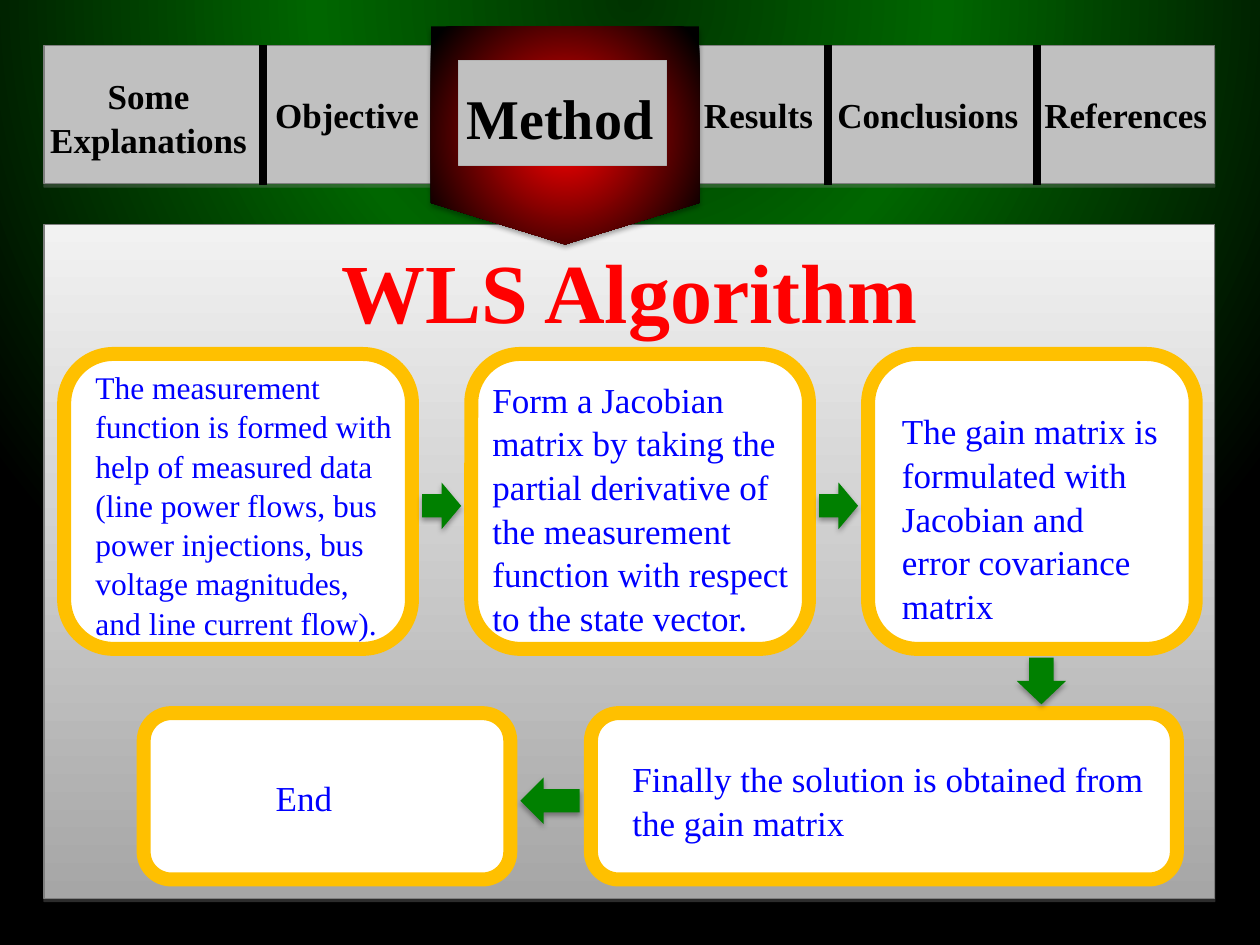
from lxml import etree
from pptx import Presentation
from pptx.dml.color import RGBColor
from pptx.enum.shapes import MSO_CONNECTOR, MSO_SHAPE
from pptx.enum.text import PP_ALIGN
from pptx.oxml import parse_xml
from pptx.oxml.ns import qn
from pptx.util import Inches, Pt

RECT, ROUND = MSO_SHAPE.RECTANGLE, MSO_SHAPE.ROUNDED_RECTANGLE
PENTAGON, ARROW = MSO_SHAPE.PENTAGON, MSO_SHAPE.RIGHT_ARROW
LEFT, CENTER = PP_ALIGN.LEFT, PP_ALIGN.CENTER
NS = 'xmlns:a="http://schemas.openxmlformats.org/drawingml/2006/main"'

THEME = {
    "font": "Times New Roman", "spacing": 1.04,
    "black": "000000", "white": "FFFFFF", "silver": "C0C0C0",
    "edge": "7F7F7F", "tab_edge": "B3B3B3", "amber": "FFC000",
    "blue": "0000FF", "red": "FF0000", "green": "008000",
    "background": [(0, "003300"), (40, "006600"), (100, "000000")],
    "panel": [(0, "F2F2F2"), (100, "A6A6A6")],
    "marker": [(0, "FF0000"), (94, "000000")],
    "title": 48, "tab": 32, "body": 20, "small": 18,
}

# Content: navigation labels with left, top, width, height
NAV = [
    (["Some", "Explanations"], (-0.04, 0.53, 2.44, 0.77)),
    (["Objective"], (1.69, 0.68, 2.13, 0.44)),
    (["Results"], (5.31, 0.68, 1.42, 0.44)),
    (["Conclusions"], (6.5, 0.68, 1.73, 0.44)),
    (["References"], (8.15, 0.68, 1.57, 0.44)),
]
DIVIDERS = [2.09, 6.57, 8.23]

# Content: flow steps as text, size, box left and width, text left, top and width
TOP_ROW, BOTTOM_ROW = (2.81, 2.34), (5.66, 1.32)
STEPS = [
    ("The measurement function is formed with help of measured data (line power "
     "flows, bus power injections, bus voltage magnitudes, and line current flow).",
     "small", TOP_ROW, (0.51, 2.76), (0.66, 2.86, 2.6)),
    ("Form a Jacobian matrix by taking the partial derivative of the measurement "
     "function with respect to the state vector.",
     "body", TOP_ROW, (3.74, 2.68), (3.81, 2.94, 2.68)),
    ("The gain matrix is formulated with Jacobian and error covariance matrix",
     "body", TOP_ROW, (6.89, 2.6), (7.06, 3.19, 2.25)),
    ("Finally the solution is obtained from the gain matrix",
     "body", BOTTOM_ROW, (4.69, 4.65), (4.92, 5.95, 4.49)),
    ("End", "body", BOTTOM_ROW, (1.14, 2.91), (2.09, 6.1, 0.87)),
]
ARROWS = [  # place, rotation
    ((3.35, 3.83, 0.31, 0.37), 0),
    ((6.5, 3.83, 0.31, 0.37), 0),
    ((8.08, 5.21, 0.37, 0.39), 90),
    ((4.13, 6.17, 0.47, 0.37), 180),
]


def rgb(name):
    return RGBColor.from_string(THEME[name])


def set_gradient(fill, parent, stops, focus=None):
    """Linear top-down gradient, or a circular one around focus (l, t, r, b in %)."""
    fill.solid()
    gs = "".join(f'<a:gs pos="{pos * 1000}"><a:srgbClr val="{c}"/></a:gs>'
                 for pos, c in stops)
    if focus:
        l, t, r, b = (v * 1000 for v in focus)
        way = (f'<a:path path="circle"><a:fillToRect l="{l}" t="{t}" '
               f'r="{r}" b="{b}"/></a:path>')
    else:
        way = '<a:lin ang="5400000" scaled="0"/>'
    grad = parse_xml(f'<a:gradFill {NS} rotWithShape="1"><a:gsLst>{gs}</a:gsLst>{way}</a:gradFill>')
    parent.replace(parent.find(qn("a:solidFill")), grad)


def add_shadow(sp, color, blur):
    effects = sp._element.spPr.find(qn("a:effectLst"))
    effects.append(parse_xml(
        f'<a:outerShdw {NS} blurRad="{Pt(blur)}" dist="{Pt(1.8)}" dir="5400000" '
        f'rotWithShape="0"><a:srgbClr val="{color}"><a:alpha val="35000"/>'
        f'</a:srgbClr></a:outerShdw>'))


def add_shape(s, kind, place, fill=None, line=None, width=0.75, rotation=0):
    sp = s.shapes.add_shape(kind, *map(Inches, place))
    sp.shadow.inherit = False
    sp.rotation = rotation
    if fill:
        sp.fill.solid()
        sp.fill.fore_color.rgb = rgb(fill)
    if line:
        sp.line.color.rgb = rgb(line)
        sp.line.width = Pt(width)
    else:
        sp.line.fill.background()
    return sp


def add_text(s, lines, place, size, color="black", bold=True, align=CENTER):
    tf = s.shapes.add_textbox(*map(Inches, place)).text_frame
    tf.word_wrap = True
    for i, line in enumerate(lines):
        p = tf.add_paragraph() if i else tf.paragraphs[0]
        p.text = line
        p.alignment = align
        p.line_spacing = THEME["spacing"]
        p.font.name = THEME["font"]
        p.font.size = Pt(THEME[size])
        p.font.bold = bold
        p.font.color.rgb = rgb(color)


def add_divider(s, x):
    line = s.shapes.add_connector(MSO_CONNECTOR.STRAIGHT, Inches(x), Inches(0.36),
                                  Inches(x), Inches(1.47))
    line.line.color.rgb = rgb("black")
    line.line.width = Pt(4.5)
    etree.SubElement(line._element.spPr, qn("a:effectLst"))


def main():
    prs = Presentation()
    prs.slide_width, prs.slide_height = Inches(10), Inches(7.5)
    s = prs.slides.add_slide(prs.slide_layouts[6])

    # Background
    fill = s.background.fill
    fill.solid()
    set_gradient(fill, s._element.cSld.bg.bgPr, THEME["background"], (50, -80, 50, 180))

    # Content panel and navigation bar
    panel = add_shape(s, RECT, (0.35, 1.78, 9.29, 5.35), line="edge")
    set_gradient(panel.fill, panel._element.spPr, THEME["panel"])
    bar = add_shape(s, RECT, (0.35, 0.36, 9.29, 1.1), "silver", "edge")
    for sp in (panel, bar):
        add_shadow(sp, "808080", 0)
    for lines, place in NAV:
        add_text(s, lines, place, "body")
    for x in DIVIDERS:
        add_divider(s, x)

    # Marker of the current section
    marker = add_shape(s, PENTAGON, (3.62, 0.01, 1.73, 2.13), rotation=90)
    marker.adjustments[0] = 0.19
    set_gradient(marker.fill, marker._element.spPr, THEME["marker"], (50, 50, 50, 50))
    add_shadow(marker, THEME["black"], 3.1)
    add_shape(s, RECT, (3.64, 0.48, 1.65, 0.83), "silver", "tab_edge", 0.25)
    add_text(s, ["Method"], (3.58, 0.59, 1.73, 0.64), "tab")

    # Flow steps
    for text, size, (top, height), (left, width), (tx, ty, tw) in STEPS:
        add_shape(s, ROUND, (left, top, width, height), "white", "amber", 8)
        add_text(s, [text], (tx, ty, tw, top + height - ty), size, "blue", False, LEFT)

    # Flow arrows
    for place, rotation in ARROWS:
        arrow = add_shape(s, ARROW, place, "green", rotation=rotation)
        add_shadow(arrow, THEME["black"], 3.1)

    # Title
    add_text(s, ["WLS Algorithm"], (2.32, 1.82, 5.35, 0.71), "title", "red")

    prs.save("out.pptx")


if __name__ == "__main__":
    main()
